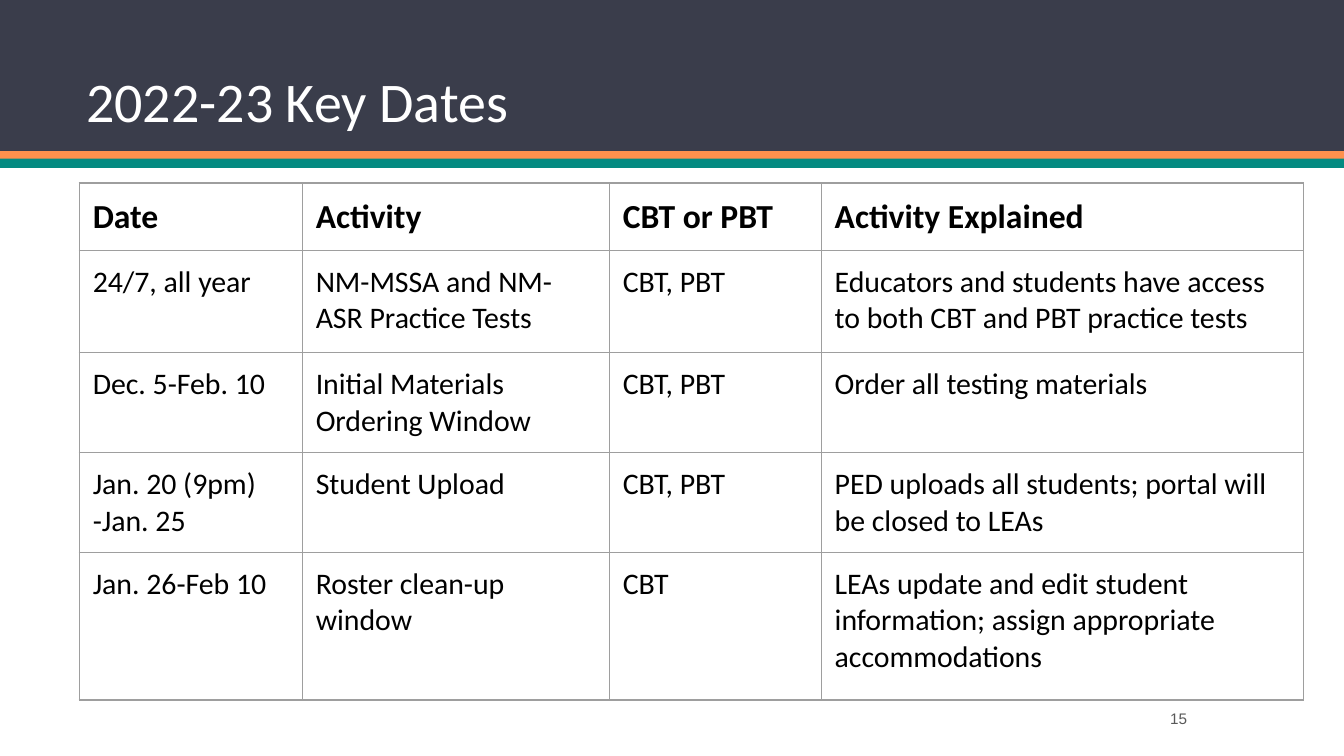
import pptx
import pptx.util
import pptx.dml.color
import pptx.enum.shapes
import pptx.enum.text
import pptx.oxml
import pptx.oxml.ns
from dataclasses import dataclass

Pt = pptx.util.Pt
RGB = pptx.dml.color.RGBColor.from_string
ANCHOR = pptx.enum.text.MSO_ANCHOR
ALIGN = pptx.enum.text.PP_ALIGN


@dataclass(frozen=True)
class Theme:
    navy: str = "3A3D4B"
    orange: str = "FF914D"
    teal: str = "048A81"
    white: str = "FFFFFF"
    black: str = "000000"
    grey: str = "595959"
    border: str = "9E9E9E"
    font: str = "Calibri"
    number_font: str = "Arial"
    title_size: float = 30
    header_size: float = 18
    body_size: float = 16
    number_size: float = 8.2


theme = Theme()


def add_run(p, text, size, color, font=theme.font, bold=False):
    r = p.add_run()
    r.text = text
    r.font.name = font
    r.font.size = Pt(size)
    r.font.bold = bold
    r.font.color.rgb = RGB(color)


def add_borders(cell):
    tcPr = cell._tc.get_or_add_tcPr()
    for i, side in enumerate(("lnL", "lnR", "lnT", "lnB")):
        tcPr.insert(i, pptx.oxml.parse_xml(
            f'<a:{side} {pptx.oxml.ns.nsdecls("a")} w="{Pt(0.75)}">'
            f'<a:solidFill><a:srgbClr val="{theme.border}"/></a:solidFill>'
            f'</a:{side}>'))


prs = pptx.Presentation()
prs.slide_width, prs.slide_height = Pt(720), Pt(405)
s = prs.slides.add_slide(prs.slide_layouts[5])

bands = [(0, 81, theme.navy), (81, 5, theme.orange), (85, 5, theme.teal)]
for top, height, color in bands:
    sp = s.shapes.add_shape(pptx.enum.shapes.MSO_SHAPE.RECTANGLE,
                            Pt(0), Pt(top), Pt(720), Pt(height))
    sp.shadow.inherit = False
    sp.fill.solid()
    sp.fill.fore_color.rgb = RGB(color)
    sp.line.fill.background()

title = s.shapes.title
sp.element.addnext(title.element)
title.left, title.top, title.width, title.height = Pt(39), Pt(15), Pt(605), Pt(61)
tf = title.text_frame
tf.word_wrap = True
tf.auto_size = pptx.enum.text.MSO_AUTO_SIZE.NONE
tf.vertical_anchor = ANCHOR.BOTTOM
p = tf.paragraphs[0]
p.alignment = ALIGN.LEFT
p.line_spacing = 0.9
add_run(p, "2022-23 Key Dates", theme.title_size, theme.white)

number = s.shapes.add_textbox(Pt(562.5), Pt(376.5), Pt(80.5), Pt(16.5))
tf = number.text_frame
tf.word_wrap = True
tf.vertical_anchor = ANCHOR.MIDDLE
p = tf.paragraphs[0]
p.alignment = ALIGN.RIGHT
add_run(p, "15", theme.number_size, theme.grey, theme.number_font)

rows = [
    ("Date", "Activity", "CBT or PBT", "Activity Explained"),
    ("24/7, all year", "NM-MSSA and NM-ASR Practice Tests", "CBT, PBT",
     "Educators and students have access to both CBT and PBT practice tests"),
    ("Dec. 5-Feb. 10", "Initial Materials Ordering Window", "CBT, PBT",
     "Order all testing materials"),
    ("Jan. 20 (9pm) -Jan. 25", "Student Upload", "CBT, PBT",
     "PED uploads all students; portal will be closed to LEAs"),
    ("Jan. 26-Feb 10", "Roster clean-up window", "CBT",
     "LEAs update and edit student information; assign appropriate accommodations"),
]
col_widths = [119.5, 164.5, 113.5, 258.5]
row_heights = [36, 55, 53.5, 53.5, 79]

table = s.shapes.add_table(len(rows), len(col_widths), Pt(42.5), Pt(98),
                           Pt(sum(col_widths)), Pt(sum(row_heights))).table
table.first_row = False
table.horz_banding = False
for col, width in zip(table.columns, col_widths):
    col.width = Pt(width)
for row, height in zip(table.rows, row_heights):
    row.height = Pt(height)

for i, texts in enumerate(rows):
    header = i == 0
    size = theme.header_size if header else theme.body_size
    for j, text in enumerate(texts):
        cell = table.cell(i, j)
        cell.margin_left = cell.margin_right = Pt(7.2)
        cell.margin_top = cell.margin_bottom = Pt(7.2)
        cell.fill.background()
        add_borders(cell)
        add_run(cell.text_frame.paragraphs[0], text, size, theme.black, bold=header)

prs.save("out.pptx")
